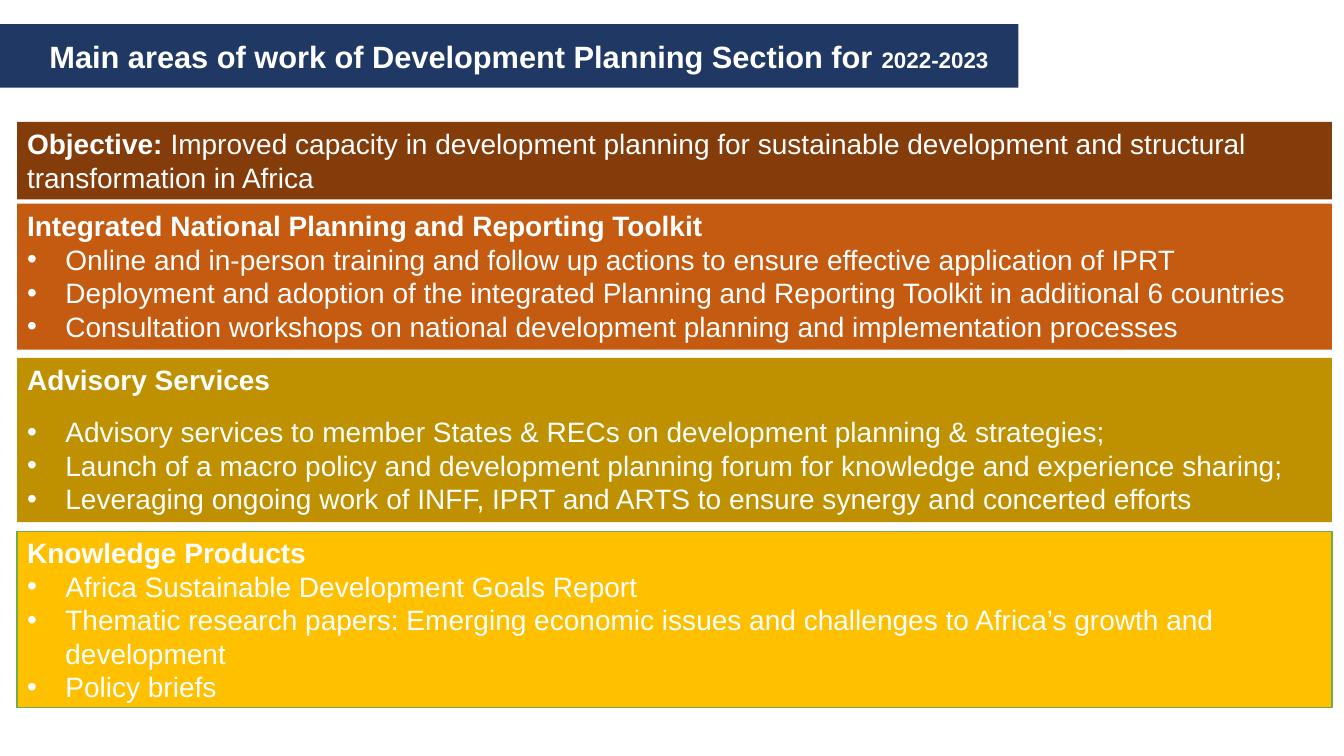
from dataclasses import dataclass

from lxml.etree import SubElement
from pptx import Presentation
from pptx.dml.color import RGBColor
from pptx.enum.shapes import MSO_SHAPE
from pptx.enum.text import MSO_ANCHOR, MSO_AUTO_SIZE, PP_ALIGN
from pptx.oxml.ns import qn
from pptx.util import Inches, Pt

TITLE = ("Main areas of work of Development Planning Section for ", "2022-2023")

BANDS = [
    {
        "heading": "Objective: ",
        "statement": "Improved capacity in development planning for sustainable "
                     "development and structural transformation in Africa",
        "fill": "843C0B", "top": 1.21, "height": 0.77,
    },
    {
        "heading": "Integrated National Planning and Reporting Toolkit",
        "bullets": [
            "Online and in-person training and follow up actions to ensure effective application of IPRT",
            "Deployment and adoption of the integrated Planning and Reporting Toolkit in additional 6 countries",
            "Consultation workshops on national development planning and implementation processes",
        ],
        "fill": "C55A11", "top": 2.02, "height": 1.45,
    },
    {
        "heading": "Advisory Services",
        "bullets": [
            "Advisory services to member States & RECs on development planning & strategies;",
            "Launch of a macro policy and development planning forum for knowledge and experience sharing;",
            "Leveraging ongoing work of INFF, IPRT and ARTS to ensure synergy and concerted efforts",
        ],
        "fill": "BF9000", "top": 3.55, "height": 1.63, "heading_gap": 13,
    },
    {
        "heading": "Knowledge Products",
        "bullets": [
            "Africa Sustainable Development Goals Report",
            "Thematic research papers: Emerging economic issues and challenges "
            "to Africa’s growth and development",
            "Policy briefs",
        ],
        "fill": "FFC000", "top": 5.27, "height": 1.75,
        "line": "70AD47", "anchor": MSO_ANCHOR.MIDDLE,
    },
]


@dataclass(frozen=True)
class Theme:
    font: str = "Arial"
    text: str = "FFFFFF"
    title_fill: str = "203864"
    title_size: int = 22
    years_size: int = 16
    body_size: int = 20


THEME = Theme()
SLIDE_WIDTH, SLIDE_HEIGHT = 13.33, 7.5
BAND_LEFT, BAND_WIDTH = 0.17, 13.04
BULLET_INDENT = 0.38


def paint(shape, color):
    shape.fill.solid()
    shape.fill.fore_color.rgb = RGBColor.from_string(color)


def style(font, size, bold):
    font.name = THEME.font
    font.size = Pt(size)
    font.bold = bold
    font.color.rgb = RGBColor.from_string(THEME.text)


def indent(para, left, hanging=0):
    properties = para._p.get_or_add_pPr()
    properties.set("marL", str(Inches(left)))
    properties.set("indent", str(-Inches(hanging)))
    return properties


def add_span(para, text, size, bold):
    span = para.add_run()
    span.text = text
    style(span.font, size, bold)


def add_title(page):
    title = page.shapes.title
    title.left, title.top = Inches(0), Inches(0.24)
    title.width, title.height = Inches(10.1), Inches(0.63)
    outline = SubElement(title._element.spPr, qn("a:prstGeom"), prst="roundRect")
    SubElement(outline, qn("a:avLst"))
    paint(title, THEME.title_fill)

    frame = title.text_frame
    frame.word_wrap = True
    frame.auto_size = MSO_AUTO_SIZE.NONE
    frame.vertical_anchor = MSO_ANCHOR.MIDDLE
    frame.margin_left = frame.margin_right = Inches(0.1)
    frame.margin_top = frame.margin_bottom = Inches(0.1)
    para = frame.paragraphs[0]
    indent(para, 0.39)
    para.alignment = PP_ALIGN.LEFT
    for text, size in zip(TITLE, (THEME.title_size, THEME.years_size)):
        add_span(para, text, size, True)


def add_bullet(frame, text):
    para = frame.add_paragraph()
    properties = indent(para, BULLET_INDENT, BULLET_INDENT)
    SubElement(properties, qn("a:buFont"), typeface=THEME.font)
    SubElement(properties, qn("a:buChar"), char="•")
    para.alignment = PP_ALIGN.LEFT
    add_span(para, text, THEME.body_size, False)
    return para


def add_band(page, band):
    box = page.shapes.add_shape(
        MSO_SHAPE.RECTANGLE, Inches(BAND_LEFT), Inches(band["top"]),
        Inches(BAND_WIDTH), Inches(band["height"]))
    box.shadow.inherit = False
    paint(box, band["fill"])
    if "line" in band:
        box.line.color.rgb = RGBColor.from_string(band["line"])
        box.line.width = Pt(1)
    else:
        box.line.fill.background()

    frame = box.text_frame
    frame.word_wrap = True
    frame.vertical_anchor = band.get("anchor", MSO_ANCHOR.TOP)
    heading = frame.paragraphs[0]
    heading.alignment = PP_ALIGN.LEFT
    add_span(heading, band["heading"], THEME.body_size, True)
    if "statement" in band:
        add_span(heading, band["statement"], THEME.body_size, False)
    for number, text in enumerate(band.get("bullets", [])):
        para = add_bullet(frame, text)
        if number == 0 and "heading_gap" in band:
            para.space_before = Pt(band["heading_gap"])


def main():
    deck = Presentation()
    deck.slide_width, deck.slide_height = Inches(SLIDE_WIDTH), Inches(SLIDE_HEIGHT)
    page = deck.slides.add_slide(deck.slide_layouts.get_by_name("Title Only"))
    add_title(page)
    for band in BANDS:
        add_band(page, band)
    deck.save("out.pptx")


if __name__ == "__main__":
    main()
